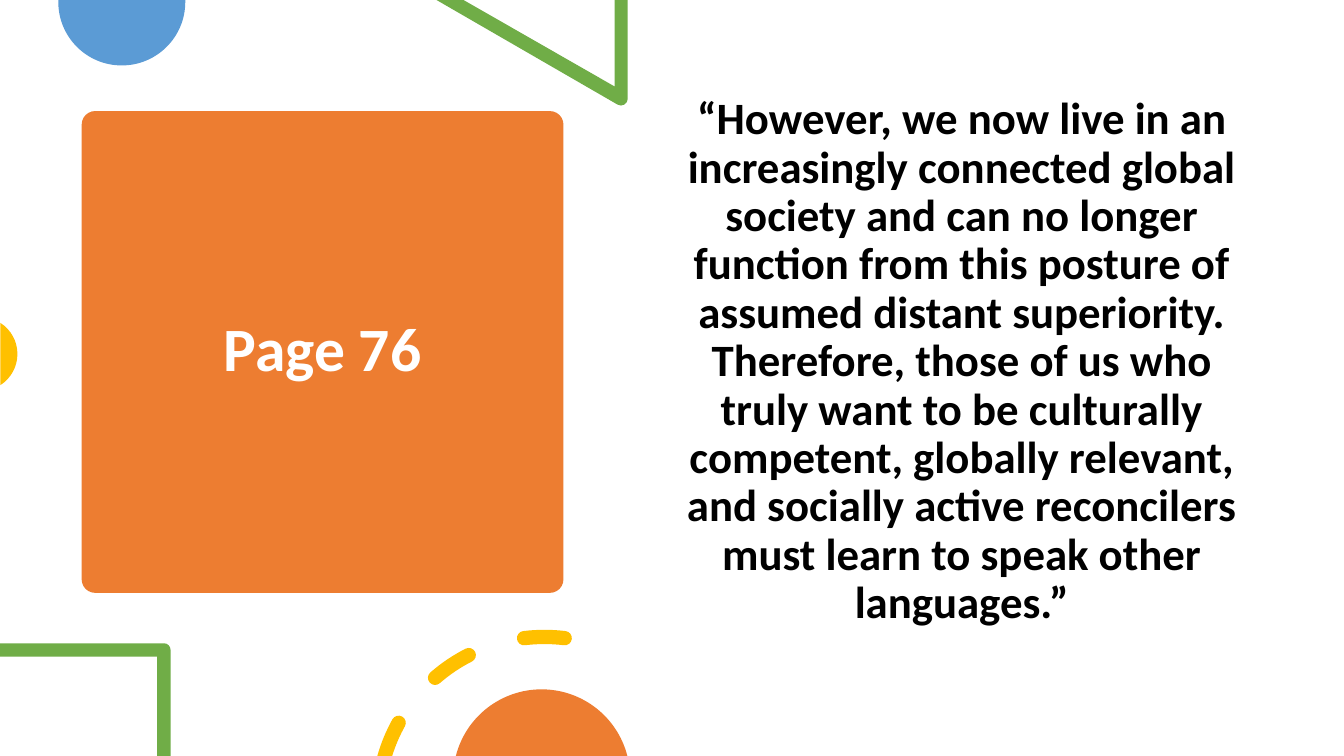
from math import cos, radians, sin, tan

from lxml import etree
from pptx import Presentation
from pptx.dml.color import RGBColor
from pptx.enum.shapes import MSO_SHAPE
from pptx.enum.text import MSO_ANCHOR, MSO_AUTO_SIZE, PP_ALIGN
from pptx.oxml.ns import qn
from pptx.util import Cm, Pt

ROUND = MSO_SHAPE.ROUNDED_RECTANGLE
MIDDLE = MSO_ANCHOR.MIDDLE
TOP = MSO_ANCHOR.TOP
CENTER = PP_ALIGN.CENTER
FIXED = MSO_AUTO_SIZE.NONE

WIDE, HIGH = 33.87, 19.05
FONT = "Calibri"
ORANGE, GREEN, BLUE, GOLD = "ED7D31", "70AD47", "5B9BD5", "FFC000"
WHITE, BLACK = "FFFFFF", "000000"
QUOTE = (
    "“However, we now live in an increasingly connected global society "
    "and can no longer function from this posture of assumed distant "
    "superiority. Therefore, those of us who truly want to be culturally "
    "competent, globally relevant, and socially active reconcilers must "
    "learn to speak other languages.”"
)


def color(text):
    return RGBColor.from_string(text)


def paint(shape, fill):
    shape.shadow.inherit = False
    shape.fill.solid()
    shape.fill.fore_color.rgb = color(fill)
    shape.line.fill.background()


def polar(x, y, r, turn):
    return x + r * cos(radians(turn)), y + r * sin(radians(turn))


def arc(x, y, r, start, end, parts=1):
    step = (end - start) / parts
    pull = 4 / 3 * tan(radians(step / 4)) * r
    bends = [polar(x, y, r, start)]
    for i in range(parts):
        here, there = start + i * step, start + (i + 1) * step
        first = polar(*polar(x, y, r, here), pull, here + 90)
        last = polar(*polar(x, y, r, there), pull, there - 90)
        bends.append(first + last + polar(x, y, r, there))
    return bends


def blob(slide, box, loops, fill):
    left, top = box[:2]
    maker = None
    for loop in loops:
        flat = [(s[i], s[i + 1]) for s in loop for i in range(0, len(s), 2)]
        spots = [(Cm(left + x), Cm(top + y)) for x, y in flat]
        if maker:
            maker.move_to(*spots[0])
        else:
            maker = slide.shapes.build_freeform(*spots[0])
        maker.add_line_segments(spots[1:], close=True)
    shape = maker.convert_to_shape()
    lines = iter(list(shape._element.iter(qn("a:lnTo"))))
    for step in [s for loop in loops for s in loop[1:]]:
        line = next(lines)
        if len(step) == 6:
            line.tag = qn("a:cubicBezTo")
            for _ in range(2):
                spare = next(lines)
                line.append(spare[0])
                spare.getparent().remove(spare)
    paint(shape, fill)


def write(slide, holder, box, text, size, ink, anchor):
    holder.left, holder.top, holder.width, holder.height = map(Cm, box)
    slide.shapes._spTree.append(holder._element)
    frame = holder.text_frame
    frame.word_wrap = True
    frame.auto_size = FIXED
    frame.vertical_anchor = anchor
    para = frame.paragraphs[0]
    para.alignment = CENTER
    para.line_spacing = 0.9
    run = para.add_run()
    run.text = text
    run.font.name = FONT
    run.font.size = Pt(size)
    run.font.bold = True
    run.font.color.rgb = color(ink)
    return para


def card(slide, box):
    left, top, wide, high = box
    tile = slide.shapes.add_shape(ROUND, *map(Cm, box))
    tile.adjustments[0] = 0.028
    paint(tile, ORANGE)
    inner = (left + 0.6, top + 0.28, wide - 1.2, high - 0.56)
    write(slide, slide.shapes.title, inner, "Page 76", 44, WHITE, MIDDLE)


def quote(slide, box):
    para = write(slide, slide.placeholders[1], box, QUOTE, 32, BLACK, TOP)
    para.space_before = Pt(10)
    props = para._p.get_or_add_pPr()
    props.set("marL", "0")
    props.set("indent", "0")
    etree.SubElement(props, qn("a:buNone"))


def upper(slide, box):
    wide = box[2]
    ball = [(4.67, 0)] + arc(3.07, 0.05, 1.6, 0, 180, 2) + [(1.47, 0)]
    blob(slide, box, [ball], BLUE)
    wedge = [(wide, 0), (wide - 0.33, 0), (wide - 0.33, 2.18), (11.68, 0), (11, 0)]
    blob(slide, box, [wedge + arc(wide - 0.17, 2.49, 0.17, 120, 0, 2)], GREEN)


def side(slide, box):
    blob(slide, box, [arc(-0.49, 0.82, 0.93, -57.5, 57.5, 2)], GOLD)


def dash(x, y, outer, inner, end):
    mid, half = 4.2, 0.18
    loop = arc(x, y, mid + half, outer, end)
    loop += arc(*polar(x, y, mid, end), half, end, end + 180, 2)[1:]
    loop += arc(x, y, mid - half, end, inner)[1:]
    if outer == inner:
        tail = polar(x, y, mid, outer)
        loop += arc(*tail, half, outer + 180, outer + 360, 2)[1:]
    return loop


def lower(slide, box):
    high = box[3]
    frame = [(0, 0.33)] + arc(4.13, 0.5, 0.17, 270, 360)
    frame += [(4.3, high), (3.96, high), (3.96, 0.67), (0, 0.67)]
    blob(slide, box, [frame], GREEN)
    starts = [(195.9, 197.4), (229, 229), (263, 263)]
    ring = [
        dash(13.72, 4.37, outer, inner, 209 + 34 * i)
        for i, (outer, inner) in enumerate(starts)
    ]
    blob(slide, box, ring, GOLD)
    blob(slide, box, [arc(13.65, 3.72, 2.23, 194.3, 345.7, 2)], ORANGE)


def main():
    deck = Presentation()
    deck.slide_width, deck.slide_height = Cm(WIDE), Cm(HIGH)
    slide = deck.slides.add_slide(deck.slide_layouts[1])
    slide.background.fill.solid()
    slide.background.fill.fore_color.rgb = color(WHITE)
    card(slide, (2.06, 2.8, 12.14, 12.14))
    upper(slide, (0, 0, 15.82, 2.66))
    side(slide, (0, 8.1, 0.43, 1.64))
    quote(slide, (16.94, 2.29, 14.6, 13.59))
    lower(slide, (0, 15.88, 15.82, HIGH - 15.88))
    deck.save("out.pptx")


if __name__ == "__main__":
    main()
